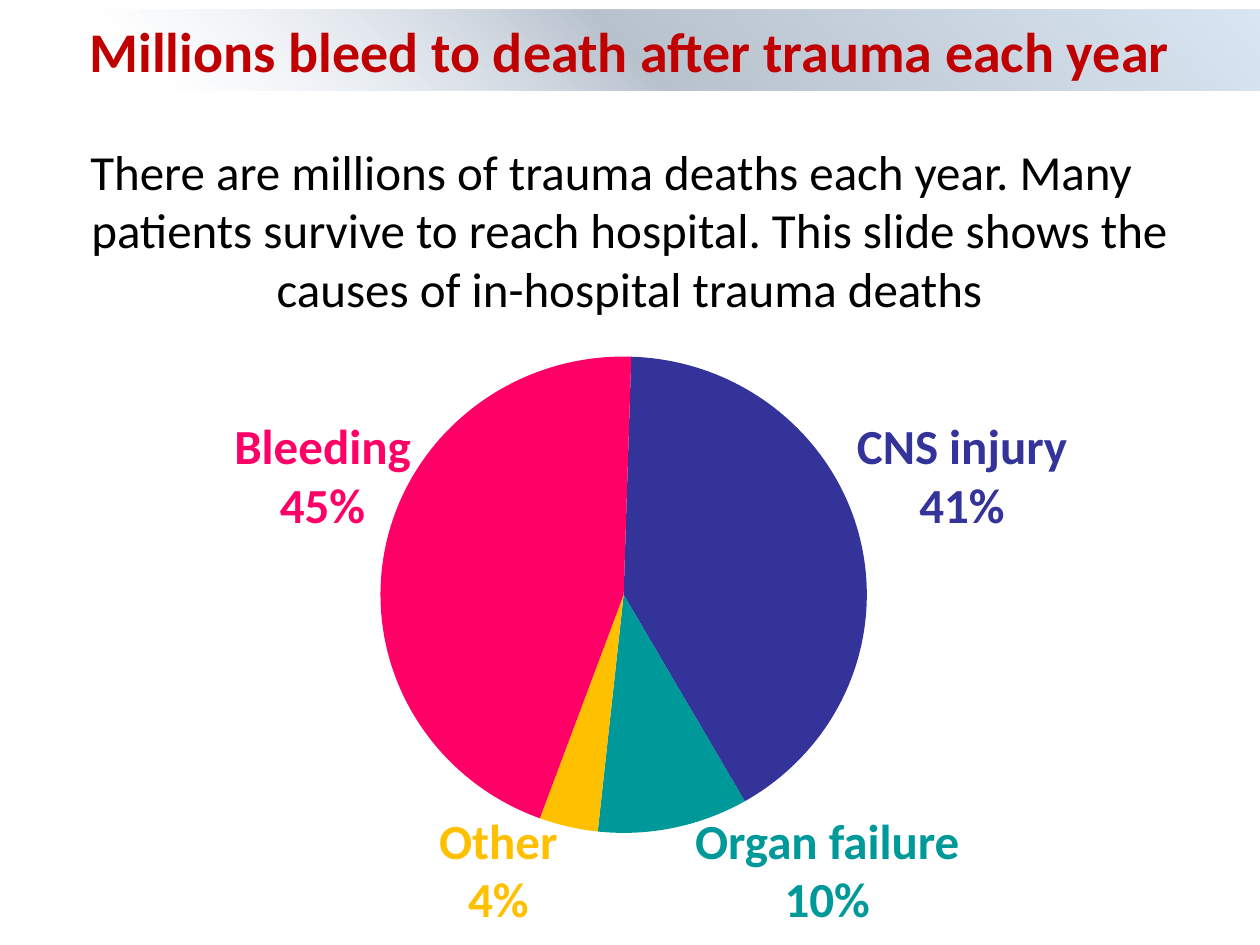
from math import ceil, cos, floor, radians, sin, tan

from lxml.etree import SubElement
from pptx import Presentation
from pptx.dml.color import RGBColor as RGB
from pptx.enum.shapes import MSO_SHAPE as SHAPE
from pptx.enum.text import MSO_ANCHOR as ANCHOR, MSO_AUTO_SIZE as AUTO, PP_ALIGN as ALIGN
from pptx.oxml.ns import qn
from pptx.util import Inches, Pt

# Content
TITLE = "Millions bleed to death after trauma each year"
INTRO = ("There are millions of trauma deaths each year. Many patients survive "
         "to reach hospital. This slide shows the causes of in-hospital trauma deaths")
# cause, percent, colour, label left, label top, label width, label wraps
CAUSES = [
    ("CNS injury", 41.2, "333399", 6.69, 3.3, 1.89, True),
    ("Organ failure", 10, "009999", 5.49, 6.43, 2.15, False),
    ("Other", 3.9, "FFC000", 3.48, 6.43, 0.95, False),
    ("Bleeding", 44.9, "FF0066", 1.85, 3.3, 1.42, False),
]

THEME = {
    "font": "Calibri", "title_size": 32, "text_size": 28,
    "title": "C00000", "text": "000000",
    # position %, colour, opacity %
    "band": [(12, "DCE6F2", 0), (50, "B8C2CD", 100), (100, "DAE6F3", 100)],
    "band_angle": 315,
}
WIDTH, HEIGHT = 10, 7.5
PIE = {"cx": 4.95, "cy": 4.72, "rx": 1.93, "ry": 1.89, "start": 1.8}
LABEL_HEIGHT = 0.94


def add_run(p, text, size, color, bold=False):
    p.alignment = ALIGN.CENTER
    r = p.add_run()
    r.text = text
    r.font.name, r.font.size, r.font.bold = THEME["font"], Pt(size), bold
    r.font.color.rgb = RGB.from_string(color)


def fill_band(sp):
    """Linear gradient that fades in from transparent."""
    sp.fill.gradient()
    grad = sp.fill._xPr.find(qn("a:gradFill"))
    for child in list(grad):
        grad.remove(child)
    stops = SubElement(grad, qn("a:gsLst"))
    for position, color, opacity in THEME["band"]:
        stop = SubElement(stops, qn("a:gs"), pos=str(position * 1000))
        clr = SubElement(stop, qn("a:srgbClr"), val=color)
        SubElement(clr, qn("a:alpha"), val=str(opacity * 1000))
    SubElement(grad, qn("a:lin"), ang=str(THEME["band_angle"] * 60000), scaled="0")


def rim(angle, lean=0):
    """Point on the rim, moved along the tangent by lean (in radii)."""
    a = radians(angle)
    return (Inches(PIE["cx"] + PIE["rx"] * (sin(a) + lean * cos(a))),
            Inches(PIE["cy"] - PIE["ry"] * (cos(a) - lean * sin(a))))


def add_slice(shapes, start, end, color):
    # One Bezier arc per quadrant touched
    quarters = [90 * q for q in range(floor(start / 90) + 1, ceil(end / 90))]
    stops = [start, *quarters, end]
    arcs = []
    for a, b in zip(stops, stops[1:]):
        lean = 4 / 3 * tan(radians(b - a) / 4)
        arcs += [rim(a, lean), rim(b, -lean), rim(b)]
    center = Inches(PIE["cx"]), Inches(PIE["cy"])
    builder = shapes.build_freeform(*rim(start))
    builder.add_line_segments([*arcs, center, rim(start)], close=True)
    sp = builder.convert_to_shape()

    # Turn each three arc points into a curve
    lines = list(sp._element.iter(qn("a:lnTo")))[:len(arcs)]
    for i in range(0, len(arcs), 3):
        curve = SubElement(lines[i].getparent(), qn("a:cubicBezTo"))
        lines[i].addprevious(curve)
        for line in lines[i:i + 3]:
            curve.append(line[0])
            line.getparent().remove(line)

    sp.shadow.inherit = False
    sp.fill.solid()
    sp.fill.fore_color.rgb = RGB.from_string(color)
    sp.line.fill.background()


def add_label(shapes, lines, color, left, top, width, wrap):
    sp = shapes.add_textbox(Inches(left), Inches(top), Inches(width), Inches(LABEL_HEIGHT))
    tf = sp.text_frame
    tf.margin_left = tf.margin_right = tf.margin_top = tf.margin_bottom = 0
    tf.word_wrap = wrap
    tf.auto_size = AUTO.SHAPE_TO_FIT_TEXT
    for i, line in enumerate(lines):
        p = tf.add_paragraph() if i else tf.paragraphs[0]
        add_run(p, line, THEME["text_size"], color, bold=True)


def main():
    prs = Presentation()
    prs.slide_width, prs.slide_height = Inches(WIDTH), Inches(HEIGHT)
    slide = prs.slides.add_slide(prs.slide_layouts[6])

    # Pie and its labels
    pie = slide.shapes.add_group_shape()
    angle = PIE["start"]
    for cause, percent, color, *place in CAUSES:
        end = angle + percent * 3.6
        add_slice(pie.shapes, angle, end, color)
        angle = end
    for cause, percent, color, *place in CAUSES:
        add_label(pie.shapes, (cause, f"{percent:.0f}%"), color, *place)

    # Introduction with a hanging indent
    sp = slide.shapes.add_textbox(Inches(0.2), Inches(1.07), Inches(9.3), Inches(1.51))
    tf = sp.text_frame
    tf.word_wrap = True
    tf.auto_size = AUTO.SHAPE_TO_FIT_TEXT
    p = tf.paragraphs[0]
    p.space_after = Pt(18)
    indent = Inches(0.29)
    pPr = p._p.get_or_add_pPr()
    pPr.set("marL", str(indent))
    pPr.set("indent", str(-indent))
    add_run(p, INTRO, THEME["text_size"], THEME["text"])

    # Title band
    sp = slide.shapes.add_shape(SHAPE.RECTANGLE, 0, Inches(0.08), prs.slide_width, Inches(0.64))
    sp.shadow.inherit = False
    sp.line.fill.background()
    fill_band(sp)
    tf = sp.text_frame
    tf.word_wrap = True
    tf.auto_size = AUTO.SHAPE_TO_FIT_TEXT
    tf.vertical_anchor = ANCHOR.TOP
    add_run(tf.paragraphs[0], TITLE, THEME["title_size"], THEME["title"], bold=True)

    prs.save("out.pptx")


if __name__ == "__main__":
    main()
